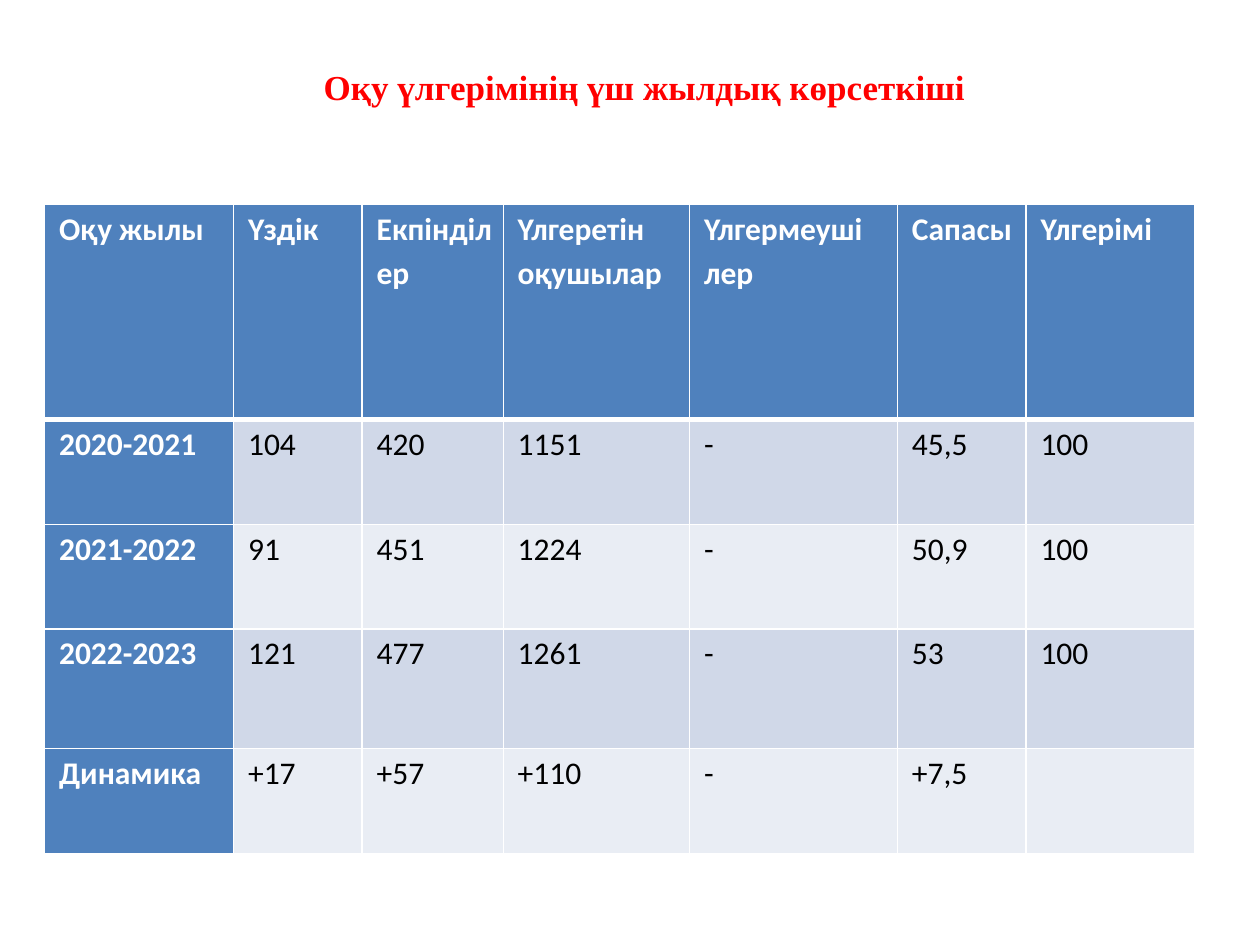
from lxml.etree import SubElement
from pptx import Presentation
from pptx.dml.color import RGBColor
from pptx.enum.text import MSO_AUTO_SIZE as AutoSize, PP_ALIGN as Align
from pptx.oxml.ns import qn
from pptx.util import Pt

RED = RGBColor(0xFF, 0x00, 0x00)
WHITE = RGBColor(0xFF, 0xFF, 0xFF)
BLACK = RGBColor(0x00, 0x00, 0x00)
BLUE = RGBColor(0x4F, 0x81, 0xBD)
BAND_DARK = RGBColor(0xD0, 0xD8, 0xE8)
BAND_LIGHT = RGBColor(0xE9, 0xED, 0xF4)

TITLE = "Оқу үлгерімінің үш жылдық көрсеткіші"
ROWS = [
    ["Оқу жылы ", "Үздік ", "Екпінділер ", "Үлгеретін оқушылар",
     "Үлгермеуші\nлер ", "Сапасы ", "Үлгерімі "],
    ["2020-2021", "104", "420", "1151", "-", "45,5", "100"],
    ["2021-2022", "91", "451", "1224", "-", "50,9", "100"],
    ["2022-2023", "121", "477", "1261", "-", "53", "100"],
    ["Динамика ", "+17", "+57", "+110", "-", "+7,5", ""],
]
COLUMN_WIDTHS = [108, 73.5, 80.6, 106.5, 118.8, 73.5, 96.5]
ROW_HEIGHTS = [123.1, 59.8, 59.8, 68.4, 59.8]


def add_run(paragraph, text, font, size, color, bold):
    run = paragraph.add_run()
    run.text = text
    run.font.name = font
    run.font.size = Pt(size)
    run.font.bold = bold
    run.font.color.rgb = color


def add_borders(cell, bottom_width):
    properties = cell._tc.get_or_add_tcPr()
    for side, width in (("L", 1), ("R", 1), ("T", 1), ("B", bottom_width)):
        line = SubElement(properties, qn(f"a:ln{side}"), w=str(Pt(width)))
        fill = SubElement(line, qn("a:solidFill"))
        SubElement(fill, qn("a:srgbClr"), val=str(WHITE))


def fill_cell(cell, text, row, column):
    heading = row == 0 or column == 0
    add_borders(cell, 3 if row == 0 else 1)
    cell.fill.solid()
    band = BAND_DARK if row % 2 else BAND_LIGHT
    cell.fill.fore_color.rgb = BLUE if heading else band
    cell.margin_left = cell.margin_right = Pt(5.4)
    cell.margin_top = cell.margin_bottom = Pt(0)
    frame = cell.text_frame
    for index, line in enumerate(text.split("\n") if text else []):
        paragraph = frame.add_paragraph() if index else frame.paragraphs[0]
        paragraph.alignment = Align.JUSTIFY
        paragraph.line_spacing = 1.15
        paragraph._p.get_or_add_pPr().set("marL", str(Pt(2.85)))
        add_run(paragraph, line, "Calibri", 18, WHITE if heading else BLACK, heading)


def add_title(slide):
    box = slide.shapes.add_textbox(Pt(90), Pt(33.8), Pt(556.6), Pt(31.7))
    frame = box.text_frame
    frame.word_wrap = True
    frame.auto_size = AutoSize.SHAPE_TO_FIT_TEXT
    paragraph = frame.paragraphs[0]
    paragraph.alignment = Align.CENTER
    add_run(paragraph, TITLE, "Times New Roman", 20, RED, True)


def add_results_table(slide):
    frame = slide.shapes.add_table(
        len(ROWS), len(COLUMN_WIDTHS), Pt(25.5), Pt(116.8),
        Pt(sum(COLUMN_WIDTHS)), Pt(sum(ROW_HEIGHTS)))
    table = frame.table
    for column, width in zip(table.columns, COLUMN_WIDTHS):
        column.width = Pt(width)
    for row, height in zip(table.rows, ROW_HEIGHTS):
        row.height = Pt(height)
    for row, texts in enumerate(ROWS):
        for column, text in enumerate(texts):
            fill_cell(table.cell(row, column), text, row, column)


def main():
    presentation = Presentation()
    presentation.slide_width = Pt(720)
    presentation.slide_height = Pt(540)
    slide = presentation.slides.add_slide(presentation.slide_layouts[6])
    add_title(slide)
    add_results_table(slide)
    presentation.save("out.pptx")


if __name__ == "__main__":
    main()
